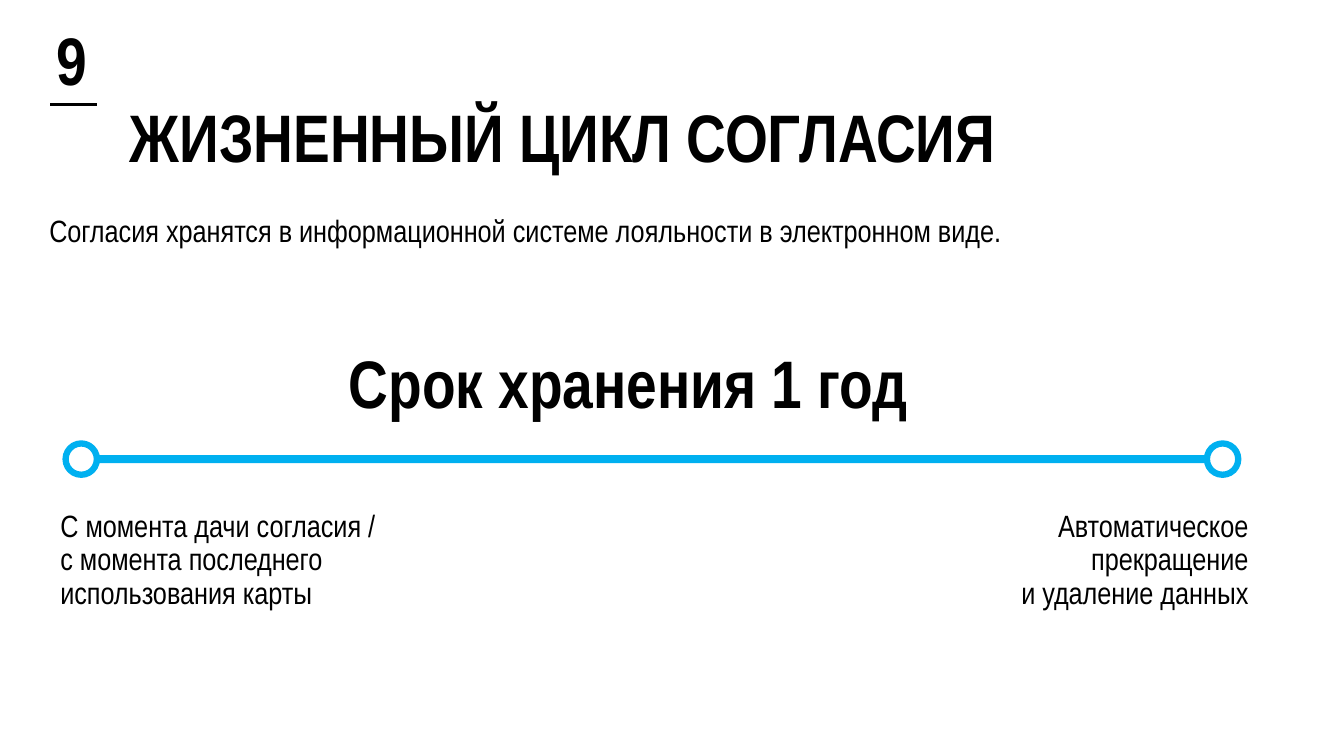
from collections import namedtuple
from dataclasses import dataclass
from lxml import etree
from pptx import Presentation, util as u
from pptx.dml.color import RGBColor
from pptx.enum import shapes as es, text as et
from pptx.oxml.ns import qn

Box = namedtuple("Box", "x y w h")


@dataclass(frozen=True)
class Theme:
    font: str = "Arial Narrow"
    ink: RGBColor = RGBColor(0, 0, 0)
    paper: RGBColor = RGBColor(255, 255, 255)
    blue: RGBColor = RGBColor(0, 176, 240)
    head: int = 48
    body: int = 22
    lead: float = 0.9
    rule: float = 2.25
    ring: float = 4.5


T = Theme()
LEFT, RIGHT = et.PP_ALIGN.LEFT, et.PP_ALIGN.RIGHT


def part(box, x, y, w, h):
    return Box(round(box.x + box.w * x / 100), round(box.y + box.h * y / 100),
               round(box.w * w / 100), round(box.h * h / 100))


def write(slide, box, words, align=LEFT, big=False, after=0):
    frame = slide.shapes.add_textbox(*box).text_frame
    frame.word_wrap = True
    frame.vertical_anchor = et.MSO_ANCHOR.BOTTOM if big else et.MSO_ANCHOR.TOP
    frame.text = words
    for para in frame.paragraphs:
        para.alignment = align
        para.line_spacing = T.lead
        para.space_after = u.Pt(after)
        for run in para.runs:
            run.font.name = T.font
            run.font.size = u.Pt(T.head if big else T.body)
            run.font.bold = big
            run.font.color.rgb = T.ink


def shape(group, kind, box, fill, line=None):
    item = group.shapes.add_shape(kind, *box)
    item.shadow.inherit = False
    item.fill.solid()
    item.fill.fore_color.rgb = fill
    if line:
        item.line.color.rgb = line
        item.line.width = u.Pt(T.ring)
    else:
        item.line.fill.background()


def header(slide, box, number, title):
    write(slide, part(box, 8.93, 43.2, 91.07, 53.33), title, big=True)
    write(slide, part(box, 0, 0, 7.2, 55.47), number, RIGHT, big=True)
    rule = part(box, 3.75, 55.47, 3.45, 0)
    line = slide.shapes.add_connector(es.MSO_CONNECTOR.STRAIGHT, rule.x, rule.y,
                                      rule.x + rule.w, rule.y)
    line.line.color.rgb = T.ink
    line.line.width = u.Pt(T.rule)
    etree.SubElement(line._element.spPr, qn("a:effectLst"))


def timeline(slide, box, term, start, end):
    dot = 2.67
    tall = dot * box.w / box.h
    mid = 45.47
    thick = 2.79
    group = slide.shapes.add_group_shape()
    shape(group, es.MSO_SHAPE.RECTANGLE,
          part(box, dot / 2, mid - thick / 2, 100 - dot, thick), T.blue)
    for x in (0, 100 - dot):
        shape(group, es.MSO_SHAPE.OVAL,
              part(box, x, mid - tall / 2, dot, tall), T.paper, T.blue)
    write(slide, part(box, 23.3, 0, 54.69, 34.84), term, big=True)
    for x, words, align in ((-1.29, start, LEFT), (47.89, end, RIGHT)):
        write(slide, part(box, x, 61.67, 53.83, 38.33), words, align)


def main():
    deck = Presentation()
    deck.slide_width, deck.slide_height = u.Inches(13.33), u.Inches(7.5)
    slide = deck.slides.add_slide(deck.slide_layouts[6])
    page = Box(0, 0, deck.slide_width, deck.slide_height)
    header(slide, part(page, 0, 0, 100, 25), "9", "ЖИЗНЕННЫЙ ЦИКЛ СОГЛАСИЯ")
    write(slide, part(page, 2.93, 27.87, 87.4, 5.73),
          "Согласия хранятся в информационной системе лояльности в электронном виде.",
          after=12)
    timeline(slide, part(page, 4.88, 43.33, 87.25, 38.27), "Срок хранения 1 год",
             "С момента дачи согласия /\nс момента последнего\nиспользования карты",
             "Автоматическое\nпрекращение\nи удаление данных")
    deck.save("out.pptx")


if __name__ == "__main__":
    main()
